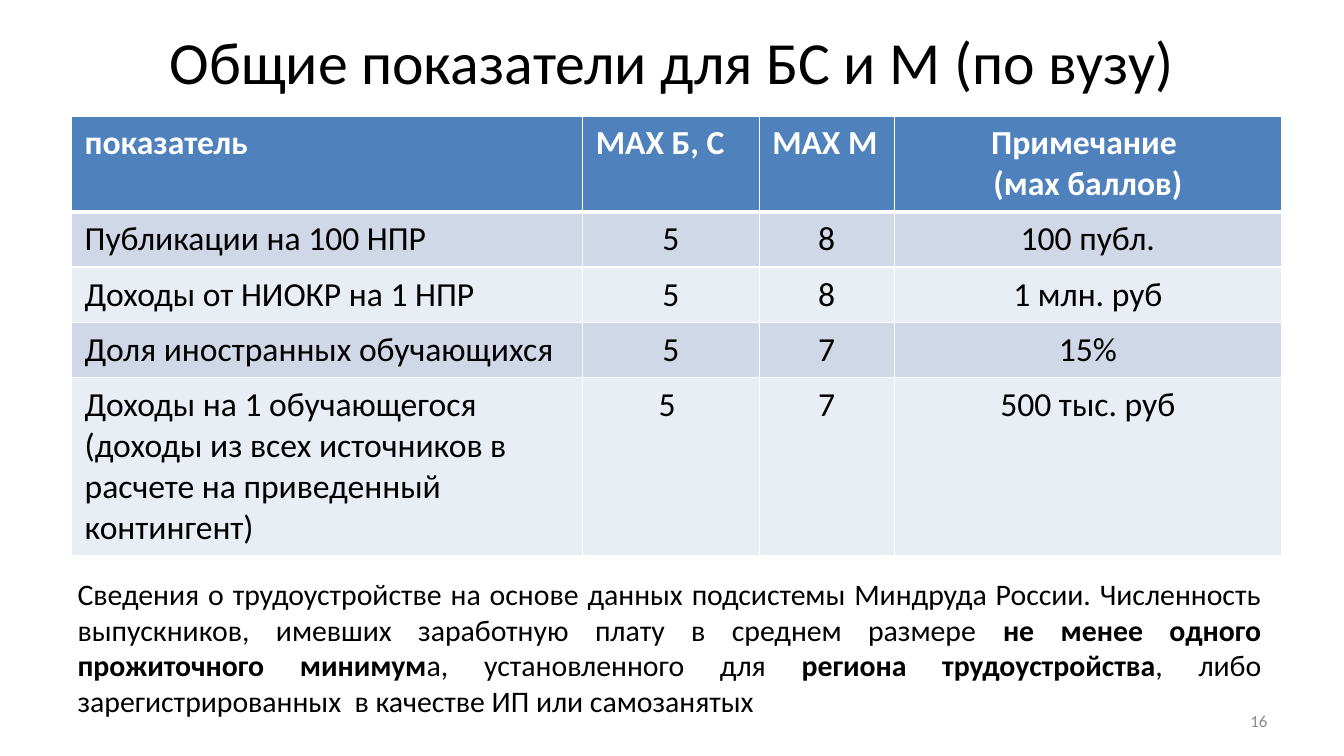
import pptx
import pptx.dml.color
import pptx.enum.text
import pptx.oxml
import pptx.oxml.ns
import pptx.util
from pptx.util import Inches

ALIGN = pptx.enum.text.PP_ALIGN
ANCHOR = pptx.enum.text.MSO_ANCHOR
HEADER_FILL = "4F81BD"
BAND_FILLS = ["D0D8E8", "E9EDF4"]
COLUMN_WIDTHS = [5.07, 1.75, 1.34, 3.84]
ROW_HEIGHTS = [0.93, 0.54, 0.54, 0.54, 1.73]
INDICATORS = [
    ["показатель", "МАХ Б, С", "МАХ М", "Примечание \n(мах баллов)"],
    ["Публикации на 100 НПР", "5", "8", "100 публ."],
    ["Доходы от НИОКР на 1 НПР", "5", "8", "1 млн. руб"],
    ["Доля иностранных обучающихся", "5", "7", "15%"],
    ["Доходы на 1 обучающегося (доходы из всех источников в расчете на "
     "приведенный контингент)", "5 ", "7", "500 тыс. руб"],
]
# Pairs of text and bold flag
EMPLOYMENT_NOTE = [
    ("Сведения о трудоустройстве на основе данных подсистемы Миндруда России. "
     "Численность выпускников, имевших заработную плату в среднем размере ", False),
    ("не менее одного прожиточного минимум", True),
    ("а, установленного для ", False),
    ("региона трудоустройства", True),
    (", либо зарегистрированных  в качестве ИП или самозанятых", False),
]


def rgb(color):
    return pptx.dml.color.RGBColor.from_string(color)


def add_run(p, text, size, color="000000", bold=False):
    r = p.add_run()
    r.text = text
    font = {"name": "Calibri", "size": pptx.util.Pt(size), "bold": bold}
    for name, value in font.items():
        setattr(r.font, name, value)
    r.font.color.rgb = rgb(color)


def format_frame(tf, side=0.0, top=0.0):
    frame = {
        "word_wrap": True,
        "auto_size": pptx.enum.text.MSO_AUTO_SIZE.NONE,
        "vertical_anchor": ANCHOR.MIDDLE,
        "margin_left": Inches(side), "margin_right": Inches(side),
        "margin_top": Inches(top), "margin_bottom": Inches(top),
    }
    for name, value in frame.items():
        setattr(tf, name, value)


def place(sp, left, top, width, height):
    sp.left, sp.top = Inches(left), Inches(top)
    sp.width, sp.height = Inches(width), Inches(height)


def add_title(s, text):
    sp = s.shapes.title
    place(sp, 0.67, 0.3, 12, 0.6)
    format_frame(sp.text_frame)
    p = sp.text_frame.paragraphs[0]
    p.alignment = ALIGN.CENTER
    add_run(p, text, 42.7)


def add_text(s, box, runs, size, align, color="000000", side=0.0, top=0.0):
    sp = s.shapes.add_textbox(*map(Inches, box))
    tf = sp.text_frame
    format_frame(tf, side, top)
    p = tf.paragraphs[0]
    p.alignment = align
    for text, bold in runs:
        add_run(p, text, size, color, bold)


def set_borders(cell, bottom_width):
    # Borders go before the fill in the cell properties
    tc_pr = cell._tc.get_or_add_tcPr()
    widths = {"lnL": 1, "lnR": 1, "lnT": 1, "lnB": bottom_width}
    for i, (tag, width) in enumerate(widths.items()):
        tc_pr.insert(i, pptx.oxml.parse_xml(
            f'<a:{tag} {pptx.oxml.ns.nsdecls("a")} w="{pptx.util.Pt(width)}">'
            f'<a:solidFill><a:srgbClr val="FFFFFF"/></a:solidFill></a:{tag}>'))


def fill_cell(cell, text, row, col):
    header = row == 0
    margins = {"margin_left": 0.13, "margin_right": 0.13,
               "margin_top": 0.07, "margin_bottom": 0.07}
    for name, value in margins.items():
        setattr(cell, name, Inches(value))
    cell.fill.solid()
    cell.fill.fore_color.rgb = rgb(HEADER_FILL if header else BAND_FILLS[(row - 1) % 2])
    set_borders(cell, 3 if header else 1)
    centred = col == 3 or (col > 0 and not header)
    tf = cell.text_frame
    for i, line in enumerate(text.split("\n")):
        p = tf.add_paragraph() if i else tf.paragraphs[0]
        p.alignment = ALIGN.CENTER if centred else ALIGN.LEFT
        add_run(p, line, 24, "FFFFFF" if header else "000000", header)


def add_indicator_table(s):
    table = s.shapes.add_table(
        len(ROW_HEIGHTS), len(COLUMN_WIDTHS), Inches(0.71), Inches(1.15),
        Inches(sum(COLUMN_WIDTHS)), Inches(sum(ROW_HEIGHTS))).table
    for column, width in zip(table.columns, COLUMN_WIDTHS):
        column.width = Inches(width)
    for row, height in zip(table.rows, ROW_HEIGHTS):
        row.height = Inches(height)
    for i, texts in enumerate(INDICATORS):
        for j, text in enumerate(texts):
            fill_cell(table.cell(i, j), text, i, j)


def main():
    prs = pptx.Presentation()
    prs.slide_width, prs.slide_height = Inches(13.33), Inches(7.5)
    s = prs.slides.add_slide(prs.slide_layouts.get_by_name("Title Only"))
    # Title and table
    add_title(s, "Общие показатели для БС и М (по вузу)")
    add_indicator_table(s)
    # Slide number and note
    add_text(s, (9.56, 6.95, 3.11, 0.4), [("16", False)], 12, ALIGN.RIGHT, "8C8C8C",
             side=0.1, top=0.05)
    add_text(s, (0.64, 6.12, 12, 0.6), EMPLOYMENT_NOTE, 21.3, ALIGN.JUSTIFY,
             side=0.13, top=0.07)
    prs.save("out.pptx")


if __name__ == "__main__":
    main()
